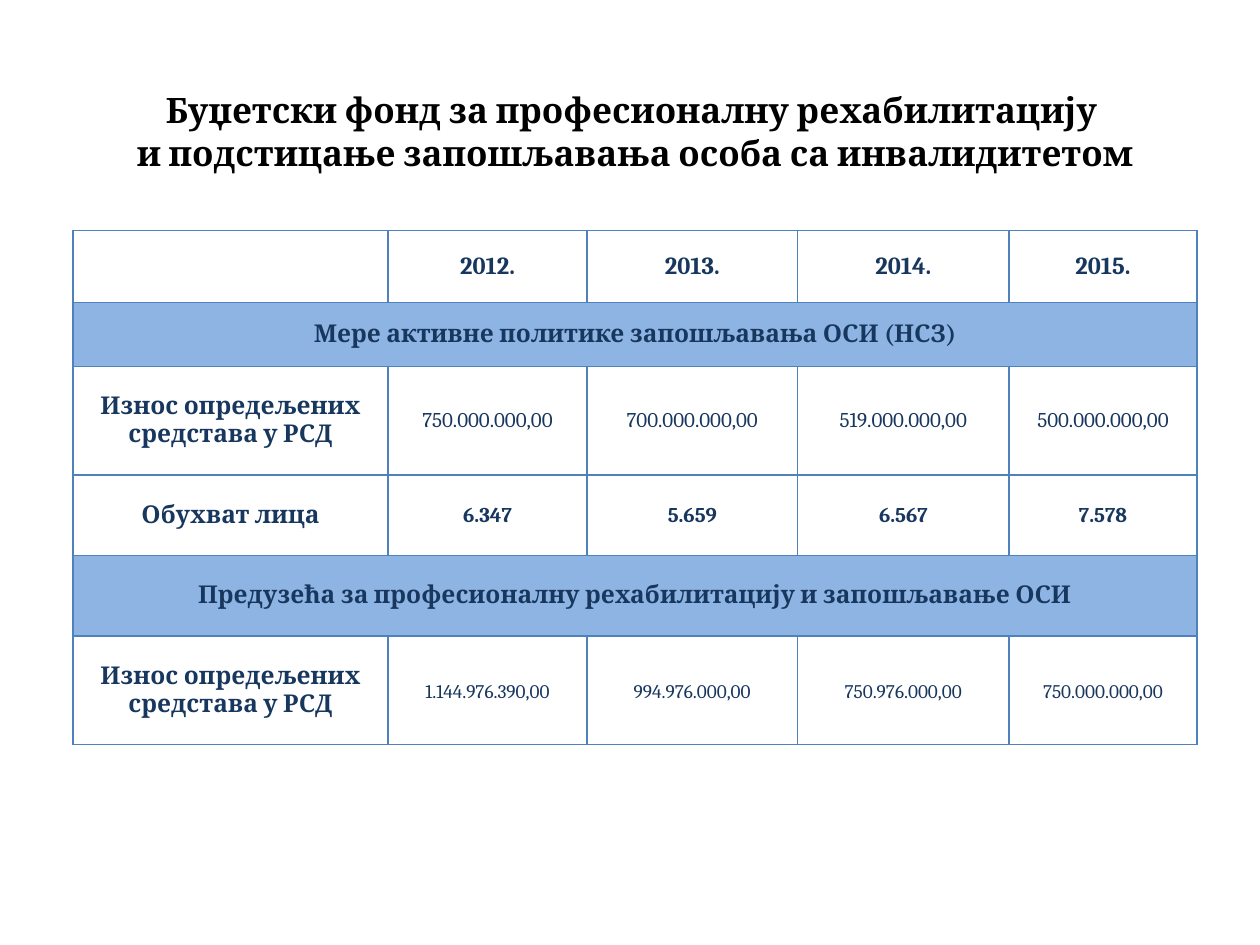
"""Build a slide with a table of the budget fund for employing people with disabilities."""
from lxml import etree
from pptx import Presentation
from pptx.dml.color import RGBColor
from pptx.enum.text import MSO_ANCHOR, PP_ALIGN
from pptx.oxml.ns import qn
from pptx.util import Inches, Pt

CENTER = PP_ALIGN.CENTER
MIDDLE = MSO_ANCHOR.MIDDLE

THEME = {
    "font": "Cambria",
    "title": {"size": 20, "bold": True, "color": "000000"},
    "label": {"size": 14, "bold": True, "color": "17375E"},
    "amount": {"size": 12, "bold": False, "color": "17375E"},
    "count": {"size": 12, "bold": True, "color": "17375E"},
    "small": {"size": 11, "bold": False, "color": "17375E"},
    "plain": "FFFFFF",
    "band": "8EB4E3",
    "border": "4F81BD",
}

TITLE = [
    "Буџетски фонд за професионалну рехабилитацију ",
    "и подстицање запошљавања особа са инвалидитетом",
]
TITLE_AREA = (0.75, 0.58, 8.58, 0.92)
TABLE_ORIGIN = (0.58, 1.83)
COLUMN_WIDTHS = [2.5, 1.58, 1.67, 1.68, 1.49]
FUNDS = "Износ опредељених средстава у РСД"
ROWS = [
    (0.57, "label", ["", "2012.", "2013.", "2014.", "2015."]),
    (0.51, "label", ["Мере активне политике запошљавања ОСИ (НСЗ)"]),
    (0.86, "amount", [FUNDS, "750.000.000,00", "700.000.000,00",
                      "519.000.000,00", "500.000.000,00"]),
    (0.64, "count", ["Обухват лица", "6.347", "5.659", "6.567", "7.578"]),
    (0.64, "label", ["Предузећа за професионалну рехабилитацију и запошљавање ОСИ"]),
    (0.86, "small", [FUNDS, "1.144.976.390,00", "994.976.000,00",
                     "750.976.000,00", "750.000.000,00"]),
]


def set_all(target, values):
    for name, value in values.items():
        setattr(target, name, value)


def write(para, text, style):
    para.alignment = CENTER
    span = para.add_run()
    span.text = text
    set_all(span.font, {"name": THEME["font"], "size": Pt(style["size"]),
                        "bold": style["bold"]})
    span.font.color.rgb = RGBColor.from_string(style["color"])


def add_borders(cell):
    properties = cell._tc.get_or_add_tcPr()
    for position, side in enumerate(("lnL", "lnR", "lnT", "lnB")):
        line = etree.Element(qn(f"a:{side}"), w=str(Pt(1)))
        fill = etree.SubElement(line, qn("a:solidFill"))
        etree.SubElement(fill, qn("a:srgbClr"), val=THEME["border"])
        properties.insert(position, line)


def format_cell(cell, color, side_margin):
    set_all(cell, {"vertical_anchor": MIDDLE,
                   "margin_left": Inches(side_margin),
                   "margin_right": Inches(side_margin),
                   "margin_top": 0, "margin_bottom": 0})
    cell.fill.solid()
    cell.fill.fore_color.rgb = RGBColor.from_string(color)
    add_borders(cell)


def add_title(page):
    box = page.shapes.add_textbox(*map(Inches, TITLE_AREA))
    frame = box.text_frame
    set_all(frame, {"word_wrap": True, "vertical_anchor": MIDDLE})
    for index, text in enumerate(TITLE):
        para = frame.add_paragraph() if index else frame.paragraphs[0]
        para.space_before = Pt(1)
        write(para, text, THEME["title"])


def add_fund_table(page):
    size = (sum(COLUMN_WIDTHS), sum(height for height, _, _ in ROWS))
    last = len(COLUMN_WIDTHS) - 1
    table = page.shapes.add_table(len(ROWS), last + 1,
                                  *map(Inches, TABLE_ORIGIN + size)).table
    set_all(table, {"first_row": False, "horz_banding": False})
    for column, width in zip(table.columns, COLUMN_WIDTHS):
        column.width = Inches(width)
    for row_index, (height, style, texts) in enumerate(ROWS):
        table.rows[row_index].height = Inches(height)
        is_band = len(texts) == 1
        for index in range(last + 1):
            format_cell(table.cell(row_index, index),
                        THEME["band" if is_band else "plain"],
                        0 if index == last else 0.06)
        if is_band:
            table.cell(row_index, 0).merge(table.cell(row_index, last))
        for index, text in enumerate(texts):
            if text:
                para = table.cell(row_index, index).text_frame.paragraphs[0]
                if style == "small" and index:
                    para.line_spacing = 1.15
                write(para, text, THEME[style if index else "label"])


def main():
    deck = Presentation()
    set_all(deck, {"slide_width": Inches(10), "slide_height": Inches(7.5)})
    page = deck.slides.add_slide(deck.slide_layouts[6])
    add_fund_table(page)
    add_title(page)
    deck.save("out.pptx")


if __name__ == "__main__":
    main()
